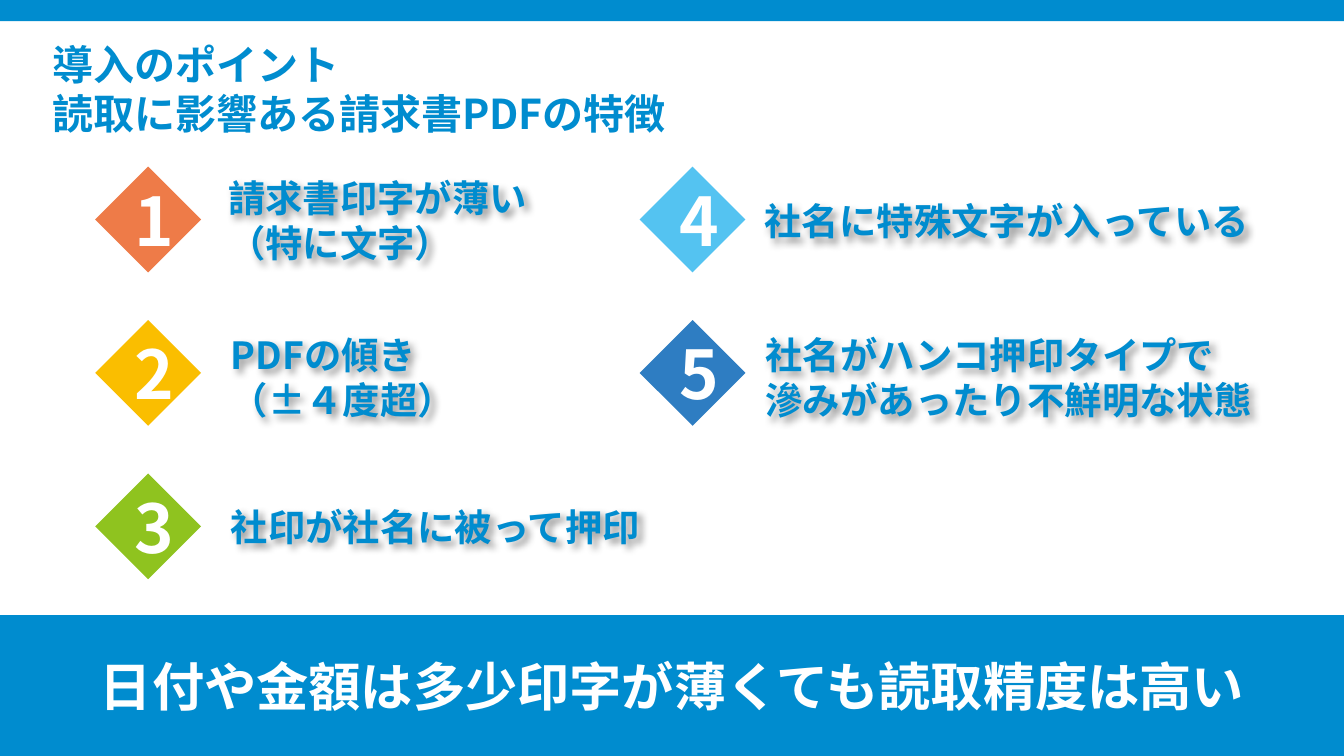
from pptx import Presentation
from pptx.dml.color import RGBColor
from pptx.enum.shapes import MSO_SHAPE as Shape
from pptx.enum.text import MSO_ANCHOR as Anchor, MSO_AUTO_SIZE as AutoSize, PP_ALIGN as Align
from pptx.oxml import parse_xml
from pptx.oxml.ns import nsdecls, qn
from pptx.util import Cm, Pt

FONT = "Noto Sans CJK JP"
BLUE, WHITE = "008CCF", "FFFFFF"
PAGE_WIDTH, PAGE_HEIGHT = 25.4, 14.29
DIAMOND_SIZE = 2.0
COLUMNS = (1.8, 12.09)
FIRST_ROW, ROW_PITCH = 3.15, 2.9
LABEL_HEIGHT = 1.55

# number, colour, column, row, label left, label top, label width, label lines
POINTS = [
    ("1", "EE7B48", 0, 0, 4.06, 3.38, 7.5, ["請求書印字が薄い", "（特に文字）"]),
    ("2", "FABE00", 0, 1, 4.11, 6.35, 7.32, ["PDFの傾き", "（±４度超）"]),
    ("3", "8FC31F", 0, 2, 4.11, 9.17, 8.71, ["社印が社名に被って押印"]),
    ("4", "54C3F1", 1, 0, 14.2, 3.4, 9.9, ["社名に特殊文字が入っている"]),
    ("5", "2E7DC2", 1, 1, 14.22, 6.35, 9.9,
     ["社名がハンコ押印タイプで", "滲みがあったり不鮮明な状態"]),
]


def color(value):
    return RGBColor.from_string(value)


def write(frame, lines, size, hex_color, align=Align.LEFT, anchor=Anchor.MIDDLE):
    """Fill a text frame with one bold paragraph per line."""
    frame.word_wrap = True
    frame.vertical_anchor = anchor
    font_format = {"name": FONT, "size": Pt(size), "bold": True}
    for index, line in enumerate(lines):
        para = frame.paragraphs[0] if index == 0 else frame.add_paragraph()
        para.text = line
        para.alignment = align
        for span in para.runs:
            for name, value in font_format.items():
                setattr(span.font, name, value)
            span.font.color.rgb = color(hex_color)
            east_asian = parse_xml(f'<a:ea {nsdecls("a")} typeface="{FONT}"/>')
            span.font._element.find(qn("a:latin")).addnext(east_asian)


def add_block(page, kind, left, top, width, height, fill):
    """Add a flat filled shape without outline."""
    block = page.shapes.add_shape(kind, Cm(left), Cm(top), Cm(width), Cm(height))
    block.shadow.inherit = False
    block.fill.solid()
    block.fill.fore_color.rgb = color(fill)
    block.line.fill.background()
    return block


def add_title(page, text):
    title = page.shapes.title
    place = {"left": 0.99, "top": 0.74, "width": 19.71, "height": 1.63}
    for name, value in place.items():
        setattr(title, name, Cm(value))
    frame = title.text_frame
    frame.auto_size = AutoSize.NONE
    for side in ("left", "top", "right", "bottom"):
        setattr(frame, f"margin_{side}", 0)
    write(frame, [text], 22, BLUE, anchor=Anchor.TOP)


def add_diamond(page, number, fill, column, row):
    diamond = add_block(page, Shape.FLOWCHART_DECISION, COLUMNS[column],
                        FIRST_ROW + row * ROW_PITCH, DIAMOND_SIZE, DIAMOND_SIZE, fill)
    write(diamond.text_frame, [number], 36, WHITE, Align.CENTER)


def add_label(page, left, top, width, lines):
    box = page.shapes.add_textbox(Cm(left), Cm(top), Cm(width), Cm(LABEL_HEIGHT))
    write(box.text_frame, lines, 20, BLUE)
    # Soft shadow behind the letters
    box._element.spPr.append(parse_xml(
        f'<a:effectLst {nsdecls("a")}>'
        '<a:outerShdw blurRad="50800" dist="38100" dir="2700000" algn="tl" rotWithShape="0">'
        '<a:srgbClr val="000000"><a:alpha val="40000"/></a:srgbClr>'
        '</a:outerShdw></a:effectLst>'))


def main():
    deck = Presentation()
    deck.slide_width, deck.slide_height = Cm(PAGE_WIDTH), Cm(PAGE_HEIGHT)
    page = deck.slides.add_slide(deck.slide_layouts[5])

    # Top bar and title
    add_block(page, Shape.RECTANGLE, 0, 0, PAGE_WIDTH, 0.4, BLUE)
    add_title(page, "導入のポイント\v読取に影響ある請求書PDFの特徴")

    # Numbered points
    for number, fill, column, row, left, top, width, lines in POINTS:
        add_diamond(page, number, fill, column, row)
        add_label(page, left, top, width, lines)

    # Closing message
    banner = add_block(page, Shape.RECTANGLE, 0, 11.63, PAGE_WIDTH, 2.66, BLUE)
    write(banner.text_frame, ["日付や金額は多少印字が薄くても読取精度は高い"], 28, WHITE, Align.CENTER)

    deck.save("out.pptx")


if __name__ == "__main__":
    main()
